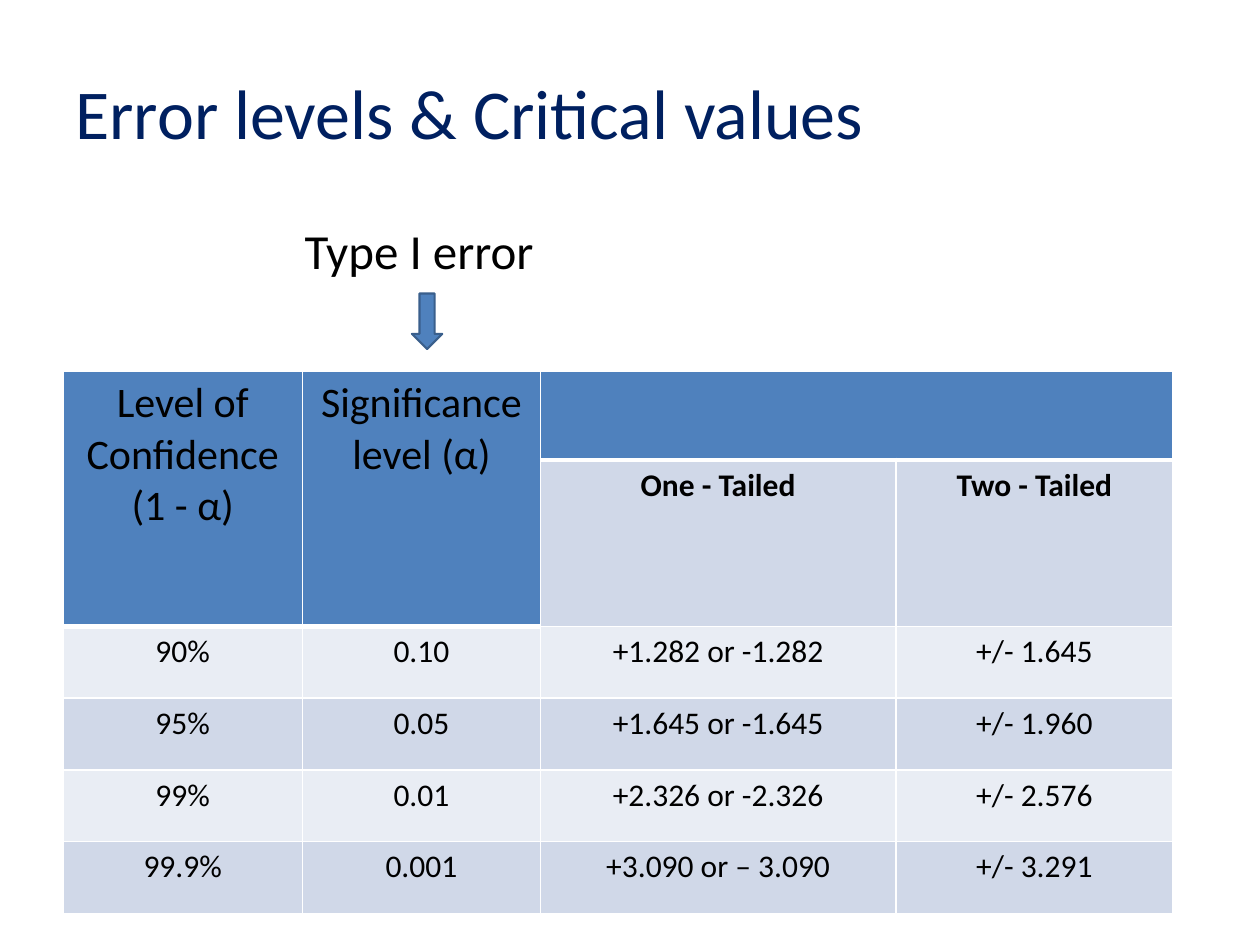
from lxml import etree
from pptx import Presentation, util as u
from pptx.dml.color import RGBColor
from pptx.enum import shapes, text
from pptx.oxml import ns

BLUE, DARK, LIGHT = "4F81BD", "D0D8E8", "E9EDF4"
HEAD = ["Level of Confidence (1 - α)", "Significance level (α)", "", ""]
TAILS = ["", "", "One - Tailed", "Two - Tailed"]
LEVELS = [
    ["90%", "0.10", "+1.282 or -1.282", "+/- 1.645"],
    ["95%", "0.05", "+1.645 or -1.645", "+/- 1.960"],
    ["99%", "0.01", "+2.326 or -2.326", "+/- 2.576"],
    ["99.9%", "0.001", "+3.090 or – 3.090", "+/- 3.291"],
]


def paint(part, tone):
    if hasattr(part, "solid"):
        part.solid()
        part.fore_color.rgb = RGBColor.from_string(tone)
    else:
        part.rgb = RGBColor.from_string(tone)


class Deck:
    """Holds the style and the current slide, with a method for each element."""

    def __init__(self, slide):
        self.slide = slide
        self.font = "Calibri"

    def style(self, para, size, tone="000000", bold=False):
        values = {"name": self.font, "size": u.Pt(size), "bold": bold}
        for key, value in values.items():
            setattr(para.font, key, value)
        paint(para.font.color, tone)

    def label(self, words, box, size, tone="000000", **form):
        frame = self.slide.shapes.add_textbox(*map(u.Inches, box)).text_frame
        for key, value in form.items():
            setattr(frame, key, value)
        para = frame.paragraphs[0]
        para.text = words
        self.style(para, size, tone)

    def arrow(self, box):
        shape = self.slide.shapes.add_shape(
            shapes.MSO_SHAPE.DOWN_ARROW, *map(u.Inches, box))
        shape.shadow.inherit = False
        paint(shape.fill, BLUE)
        paint(shape.line.color, "3A5F8C")
        shape.line.width = u.Pt(1.25)

    def edge(self, cell):
        prop = cell._tc.get_or_add_tcPr()
        for side, width in {"L": 1, "R": 1, "T": 1, "B": 3}.items():
            line = etree.SubElement(prop, ns.qn(f"a:ln{side}"), w=str(u.Pt(width)))
            fill = etree.SubElement(line, ns.qn("a:solidFill"))
            etree.SubElement(fill, ns.qn("a:srgbClr"), val="FFFFFF")

    def cell(self, cell, words, fill, size, bold):
        para = cell.text_frame.paragraphs[0]
        para.text = words
        para.alignment = text.PP_ALIGN.CENTER
        self.style(para, size, bold=bold)
        paint(cell.fill, fill)

    def table(self, rows, box, widths, heights, spans):
        grid = self.slide.shapes.add_table(
            len(rows), len(widths), *map(u.Inches, box)).table
        for col, width in zip(grid.columns, widths):
            col.width = u.Inches(width)
        for row, height in zip(grid.rows, heights):
            row.height = u.Inches(height)
        for first, last in spans:
            grid.cell(*first).merge(grid.cell(*last))
        for r, row in enumerate(rows):
            fill = BLUE if r == 0 else DARK if r % 2 else LIGHT
            for c, words in enumerate(row):
                cell = grid.cell(r, c)
                if cell.is_spanned:
                    continue
                if r == 0:
                    self.edge(cell)
                self.cell(cell, words, fill, 18 if r else 24, r == 1)


def main():
    show = Presentation()
    show.slide_width, show.slide_height = u.Inches(10), u.Inches(7.5)
    deck = Deck(show.slides.add_slide(show.slide_layouts[6]))
    deck.table([HEAD, TAILS, *LEVELS], (0.5, 2.95, 8.82, 4.1),
               [1.9, 1.89, 2.82, 2.2], [0.7, 1.12] + [0.57] * len(LEVELS),
               [((0, 0), (1, 0)), ((0, 1), (1, 1)), ((0, 2), (0, 3))])
    deck.label("Error levels & Critical values", (0.5, 0.38, 8.99, 1.01), 40,
               "002060", word_wrap=True, vertical_anchor=text.MSO_ANCHOR.MIDDLE)
    deck.label("Type I error", (2.32, 1.7, 2.13, 0.57), 28, word_wrap=False,
               auto_size=text.MSO_AUTO_SIZE.SHAPE_TO_FIT_TEXT)
    deck.arrow((3.27, 2.33, 0.24, 0.44))
    show.save("out.pptx")


if __name__ == "__main__":
    main()
